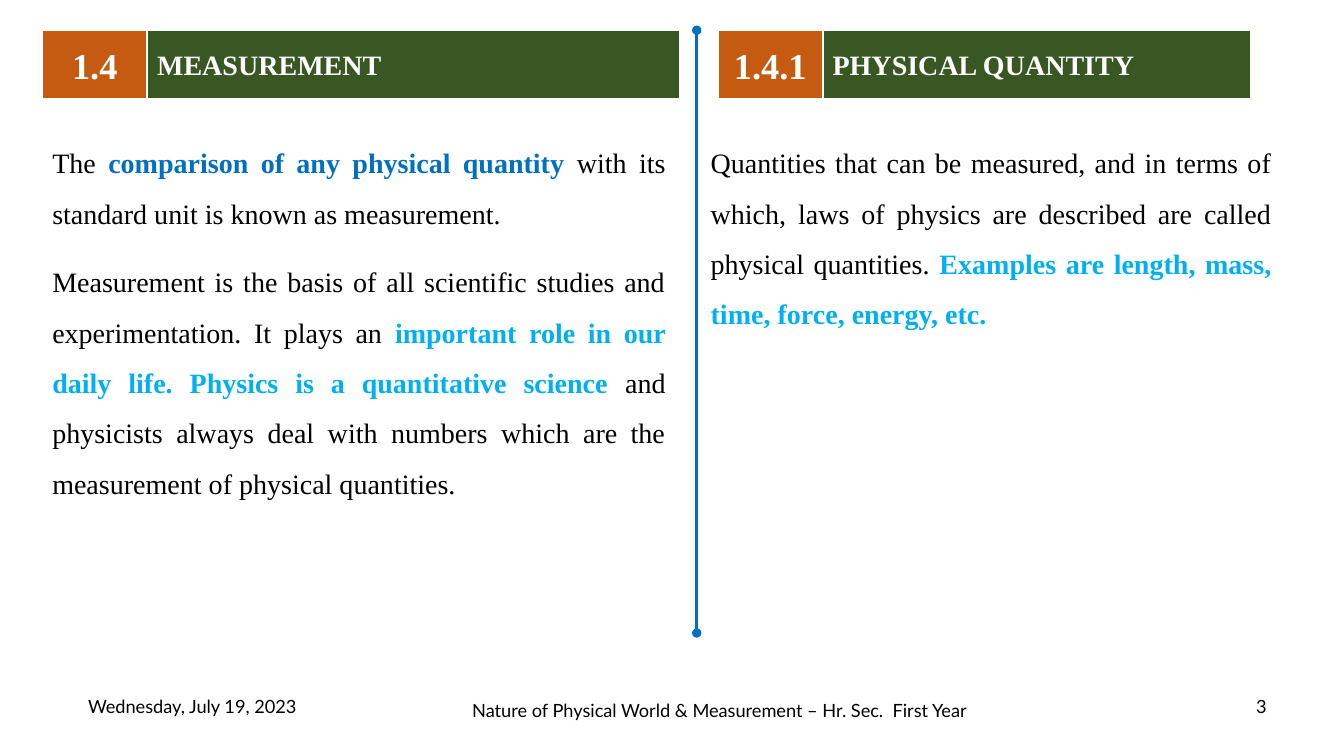
from dataclasses import dataclass

from lxml import etree
from pptx import Presentation
from pptx import util as u
from pptx.dml.color import RGBColor
from pptx.enum import shapes, text
from pptx.oxml.ns import qn

WHITE = RGBColor(0xFF, 0xFF, 0xFF)
BLACK = RGBColor(0x00, 0x00, 0x00)
ORANGE = RGBColor(0xC5, 0x5A, 0x11)
GREEN = RGBColor(0x38, 0x57, 0x23)
BLUE = RGBColor(0x00, 0x70, 0xC0)
SKY = RGBColor(0x00, 0xB0, 0xF0)

SERIF, SANS = "Times New Roman", "Lato"
WIDTH, HEIGHT = u.Inches(13.33), u.Inches(7.5)

TOP, BAR_H, NUMBER_W = 4, 9.07, 7.8
LEFT, BODY_Y = 3.15, 16.4
DIVIDER_X, DIVIDER_END = 51.84, 83.73
FOOTER_H = 5.33


@dataclass(frozen=True)
class Heading:
    number: str
    title: str
    x: float
    title_w: float


@dataclass(frozen=True)
class Run:
    words: str
    color: RGBColor = BLACK
    bold: bool = False


@dataclass(frozen=True)
class TextBlock:
    x: float
    y: float
    w: float
    h: float
    runs: tuple[Run, ...]


HEADINGS = (
    Heading("1.4", "MEASUREMENT", LEFT, 39.68),
    Heading("1.4.1", "PHYSICAL QUANTITY", 53.41, 31.88),
)

BODIES = (
    TextBlock(LEFT, BODY_Y, 47.11, 14.8, (
        Run("The "),
        Run("comparison of any physical quantity ", BLUE, True),
        Run("with its standard unit is known as measurement. "),
    )),
    TextBlock(LEFT, 32.13, 47.11, 41.73, (
        Run("Measurement is the basis of all scientific studies and "
            "experimentation. It plays an "),
        Run("important role in our daily life. Physics is a quantitative "
            "science ", SKY, True),
        Run("and physicists always deal with numbers which are the "
            "measurement of physical quantities. "),
    )),
    TextBlock(52.14, BODY_Y, 43.21, 34.27, (
        Run("Quantities that can be measured, and in terms of which, laws of "
            "physics are described are called physical quantities. "),
        Run("Examples are length, mass, time, force, energy, etc. ", SKY, True),
    )),
)

FOOTERS = (
    TextBlock(5.33, 90.8, 17.93, FOOTER_H, (Run("Wednesday, July 19, 2023"),)),
    TextBlock(92.27, 90.8, 3.15, FOOTER_H, (Run("3"),)),
    TextBlock(34.13, 91.33, 38.78, FOOTER_H, (
        Run("Nature of Physical World & Measurement – Hr. Sec.  First Year"),
    )),
)


def across(share: float) -> int:
    return round(WIDTH * share / 100)


def down(share: float) -> int:
    return round(HEIGHT * share / 100)


def write(sp, runs: tuple[Run, ...], *, size: float, font: str = SERIF,
          align=text.PP_ALIGN.LEFT, anchor=text.MSO_ANCHOR.MIDDLE,
          spacing: float = 1.0, wrap: bool = True) -> None:
    tf = sp.text_frame
    tf.word_wrap = wrap
    tf.vertical_anchor = anchor
    p = tf.paragraphs[0]
    p.alignment = align
    p.line_spacing = spacing
    for run in runs:
        r = p.add_run()
        r.text = run.words
        r.font.name = font
        r.font.size = u.Pt(size)
        r.font.bold = run.bold
        r.font.color.rgb = run.color


def add_text(s, block: TextBlock, **style) -> None:
    sp = s.shapes.add_textbox(across(block.x), down(block.y),
                              across(block.w), down(block.h))
    write(sp, block.runs, **style)


def add_bar(s, label: str, x: float, w: float, fill: RGBColor, **style) -> None:
    sp = s.shapes.add_shape(shapes.MSO_SHAPE.RECTANGLE, across(x), down(TOP),
                            across(w), down(BAR_H))
    sp.shadow.inherit = False
    sp.fill.solid()
    sp.fill.fore_color.rgb = fill
    sp.line.color.rgb = WHITE
    sp.line.width = u.Pt(1.5)
    write(sp, (Run(label, WHITE, True),), **style)


def add_heading(s, heading: Heading) -> None:
    add_bar(s, heading.number, heading.x, NUMBER_W, ORANGE,
            size=26, align=text.PP_ALIGN.CENTER)
    add_bar(s, heading.title, heading.x + NUMBER_W, heading.title_w, GREEN,
            size=20)


def add_divider(s) -> None:
    x = across(DIVIDER_X)
    line = s.shapes.add_connector(shapes.MSO_CONNECTOR.STRAIGHT,
                                  x, down(TOP), x, down(DIVIDER_END))
    line.line.color.rgb = BLUE
    line.line.width = u.Pt(2.25)
    ln = line.line._get_or_add_ln()
    for end in ("a:headEnd", "a:tailEnd"):
        etree.SubElement(ln, qn(end), type="oval")
    etree.SubElement(line._element.spPr, qn("a:effectLst"))


def main() -> None:
    prs = Presentation()
    prs.slide_width, prs.slide_height = WIDTH, HEIGHT
    s = prs.slides.add_slide(prs.slide_layouts[6])
    for footer in FOOTERS:
        add_text(s, footer, size=13, font=SANS, wrap=False,
                 align=text.PP_ALIGN.CENTER)
    add_divider(s)
    for heading in HEADINGS:
        add_heading(s, heading)
    for body in BODIES:
        add_text(s, body, size=20, spacing=1.5, align=text.PP_ALIGN.JUSTIFY,
                 anchor=text.MSO_ANCHOR.TOP)
    prs.save("out.pptx")


if __name__ == "__main__":
    main()
